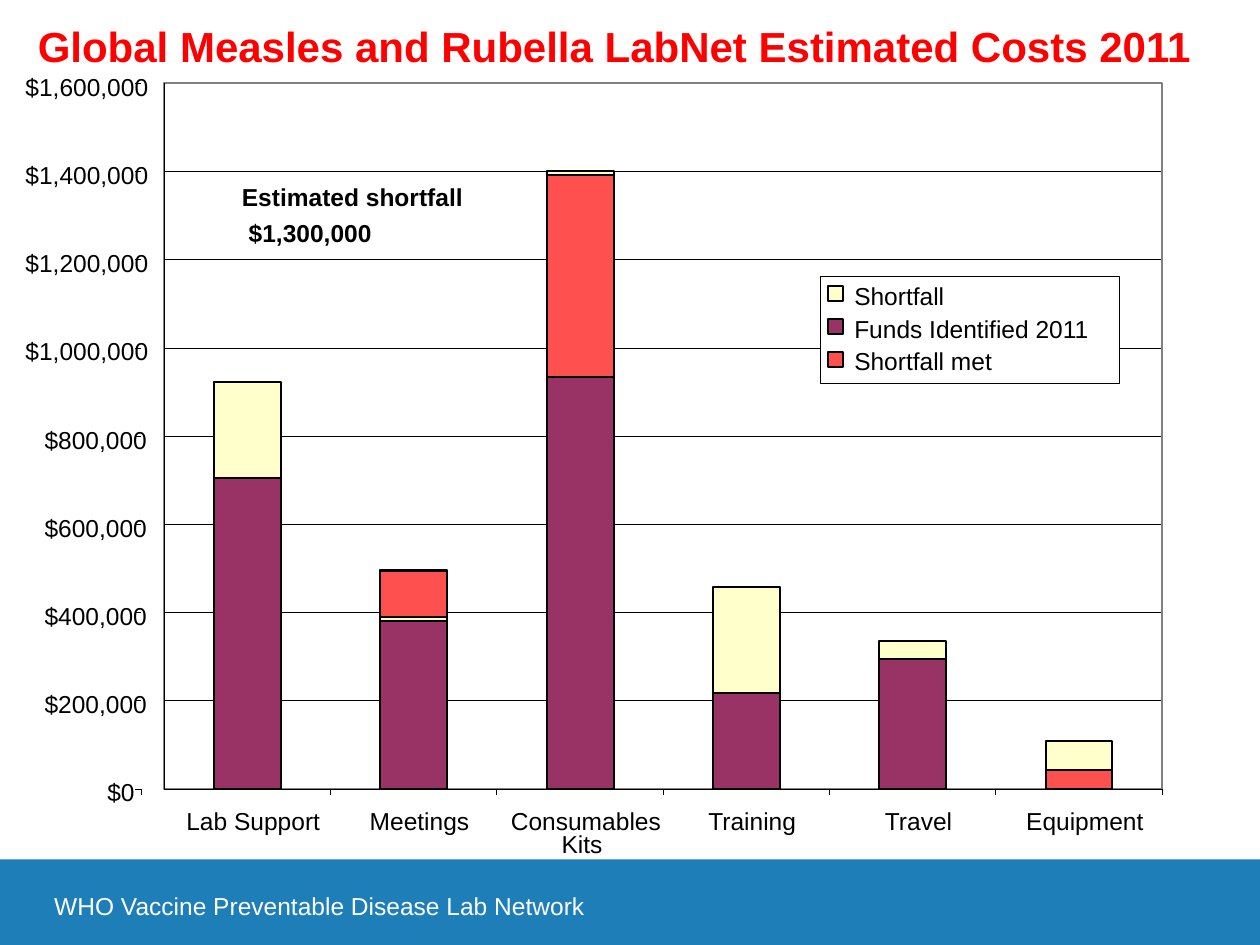
import pptx
import pptx.dml.color
import pptx.enum.shapes
import pptx.enum.text
import pptx.util
from lxml import etree

Inches = pptx.util.Inches
Pt = pptx.util.Pt
RGBColor = pptx.dml.color.RGBColor
ALIGN = pptx.enum.text.PP_ALIGN
ANCHOR = pptx.enum.text.MSO_ANCHOR

BLACK = RGBColor(0x00, 0x00, 0x00)
WHITE = RGBColor(0xFF, 0xFF, 0xFF)
RED = RGBColor(0xFF, 0x00, 0x00)
GREY = RGBColor(0x80, 0x80, 0x80)
BLUE = RGBColor(0x1E, 0x7F, 0xB8)
FUNDS = RGBColor(0x99, 0x33, 0x66)
SHORTFALL = RGBColor(0xFF, 0xFF, 0xCC)
SHORTFALL_MET = RGBColor(0xFF, 0x50, 0x50)
HAIRLINE, OUTLINE = 0.1, 1.13

AXIS_MAX, AXIS_STEP = 1_600_000, 200_000
# Category, label width, funds identified, total with shortfall, shortfall met (from, to)
COSTS = [
    ("Lab Support", 1.12, 705_000, 923_000, None),
    ("Meetings", 0.9, 380_000, 497_000, (389_000, 494_000)),
    ("Consumables", 1.25, 949_000, 1_400_000, (934_000, 1_391_000)),
    ("Training", 0.78, 217_000, 457_000, None),
    ("Travel", 0.62, 294_000, 334_000, None),
    ("Equipment", 1.02, 9_000, 109_000, (0, 43_000)),
]


def add_box(slide, left, top, width, height, fill=None, line=None, weight=OUTLINE):
    box = slide.shapes.add_shape(
        pptx.enum.shapes.MSO_SHAPE.RECTANGLE,
        Inches(left), Inches(top), Inches(width), Inches(height))
    box.shadow.inherit = False
    if fill is None:
        box.fill.background()
    else:
        box.fill.solid()
        box.fill.fore_color.rgb = fill
    if line is None:
        box.line.fill.background()
    else:
        box.line.color.rgb = line
        box.line.width = Pt(weight)
    return box


def add_line(slide, x1, y1, x2, y2):
    line = slide.shapes.add_connector(
        pptx.enum.shapes.MSO_CONNECTOR.STRAIGHT,
        Inches(x1), Inches(y1), Inches(x2), Inches(y2))
    line.line.color.rgb = BLACK
    line.line.width = Pt(HAIRLINE)
    etree.SubElement(line._element.spPr, pptx.oxml.ns.qn("a:effectLst"))
    return line


def add_run(paragraph, text, size=14, color=BLACK, bold=False):
    run = paragraph.add_run()
    run.text = text
    run.font.name = "Arial"
    run.font.size = Pt(size)
    run.font.bold = bold
    run.font.color.rgb = color


def add_label(slide, left, top, width, text, align=ALIGN.CENTER, color=BLACK):
    label = slide.shapes.add_textbox(Inches(left), Inches(top), Inches(width), Inches(0.24))
    frame = label.text_frame
    frame.word_wrap = False
    frame.margin_left = frame.margin_right = frame.margin_top = frame.margin_bottom = 0
    frame.paragraphs[0].alignment = align
    add_run(frame.paragraphs[0], text, color=color)


def add_title(slide, left, top, width, height):
    title = slide.shapes.title
    title.left, title.top = Inches(left), Inches(top)
    title.width, title.height = Inches(width), Inches(height)
    frame = title.text_frame
    frame.word_wrap = True
    frame.vertical_anchor = ANCHOR.MIDDLE
    frame.margin_bottom = Inches(0.11)
    frame.paragraphs[0].alignment = ALIGN.LEFT
    add_run(frame.paragraphs[0], "Global Measles and Rubella LabNet Estimated Costs 2011",
            24, RED, True)


def add_footer(slide, left, top, width, height):
    add_box(slide, left, top, width, height, BLUE)
    add_label(slide, left + 0.43, top + 0.25, 4.25,
              "WHO Vaccine Preventable Disease Lab Network", ALIGN.LEFT, WHITE)


def add_cost_chart(slide, left, top, width, height):
    right, bottom = left + width, top + height
    pitch = width / len(COSTS)
    bar_width = 0.53

    def y_at(dollars):
        return bottom - height * dollars / AXIS_MAX

    # Gridlines and plot frame; the middle gridline joins the frame
    add_box(slide, left, top, width, height, WHITE)
    amounts = range(0, AXIS_MAX + 1, AXIS_STEP)
    gridlines = [add_line(slide, left, y_at(a), right, y_at(a)) for a in amounts]
    frame = add_box(slide, left, top, width, height, line=GREY)
    middle = gridlines[len(gridlines) // 2]
    middle.begin_connect(frame, 1)
    middle.end_connect(frame, 3)

    # Stacked bars
    def add_bar(index, low, high, color):
        add_box(slide, left + 0.4 + index * pitch, y_at(high), bar_width,
                y_at(low) - y_at(high), color, BLACK)

    for i, (_, _, funds, total, met) in enumerate(COSTS):
        add_bar(i, 0, funds, FUNDS)
        add_bar(i, funds, total, SHORTFALL)
        if met:
            add_bar(i, *met, SHORTFALL_MET)

    # Value axis
    add_line(slide, left, top, left, bottom)
    for amount in amounts:
        y = y_at(amount)
        add_line(slide, left - 0.23, y, left - 0.18, y)
        if amount == 0:
            label_left, label_width = left - 0.45, 0.22
        elif amount < 1_000_000:
            label_left, label_width = left - 0.95, 0.82
        else:
            label_left, label_width = left - 1.1, 0.98
        add_label(slide, label_left, y - 0.09, label_width, f"${amount:,}")

    # Category axis; the first tick stands beside the value ticks
    add_line(slide, left, bottom, right, bottom)
    for i in range(len(COSTS) + 1):
        x = left + i * pitch if i else left - 0.18
        tick = add_line(slide, x, bottom + 0.05, x, bottom)
        if i == len(COSTS) // 2:
            tick.end_connect(frame, 2)
    for i, (category, label_width, *_) in enumerate(COSTS):
        center = left + (i + 0.5) * pitch + 0.05
        add_label(slide, center - label_width / 2, bottom + 0.14, label_width, category)
        if category == "Consumables":
            add_label(slide, center - 0.24, bottom + 0.32, 0.42, "Kits")


def add_legend(slide, left, top, width, height):
    add_box(slide, left, top, width, height, WHITE, BLACK, HAIRLINE)
    entries = [("Shortfall", SHORTFALL), ("Funds Identified 2011", FUNDS),
               ("Shortfall met", SHORTFALL_MET)]
    for i, (series, color) in enumerate(entries):
        y = top + 0.04 + i * 0.26
        add_box(slide, left + 0.06, y + 0.04, 0.12, 0.12, color, BLACK)
        add_label(slide, left + 0.27, y, 1.95, series, ALIGN.LEFT)


def add_shortfall_note(slide, left, top, width, height):
    note = slide.shapes.add_textbox(Inches(left), Inches(top), Inches(width), Inches(height))
    frame = note.text_frame
    frame.word_wrap = True
    frame.margin_left = frame.margin_right = Inches(0.04)
    for i, text in enumerate(["Estimated shortfall", " $1,300,000"]):
        paragraph = frame.add_paragraph() if i else frame.paragraphs[0]
        properties = paragraph._p.get_or_add_pPr()
        properties.set("marL", str(Inches(1)))
        properties.set("indent", str(Inches(-0.5)))
        paragraph.line_spacing = 0.8
        if i:
            paragraph.space_before = Pt(7)
        add_run(paragraph, text, bold=True)


def main():
    deck = pptx.Presentation()
    deck.slide_width, deck.slide_height = Inches(10), Inches(7.5)
    slide = deck.slides.add_slide(deck.slide_layouts[5])
    add_title(slide, 0.2, 0.11, 9.51, 0.57)
    add_footer(slide, 0, 6.82, 10, 0.68)
    add_cost_chart(slide, 1.3, 0.66, 7.92, 5.6)
    add_legend(slide, 6.51, 2.19, 2.37, 0.85)
    add_shortfall_note(slide, 1.38, 1.44, 4.16, 0.9)
    deck.save("out.pptx")


if __name__ == "__main__":
    main()
